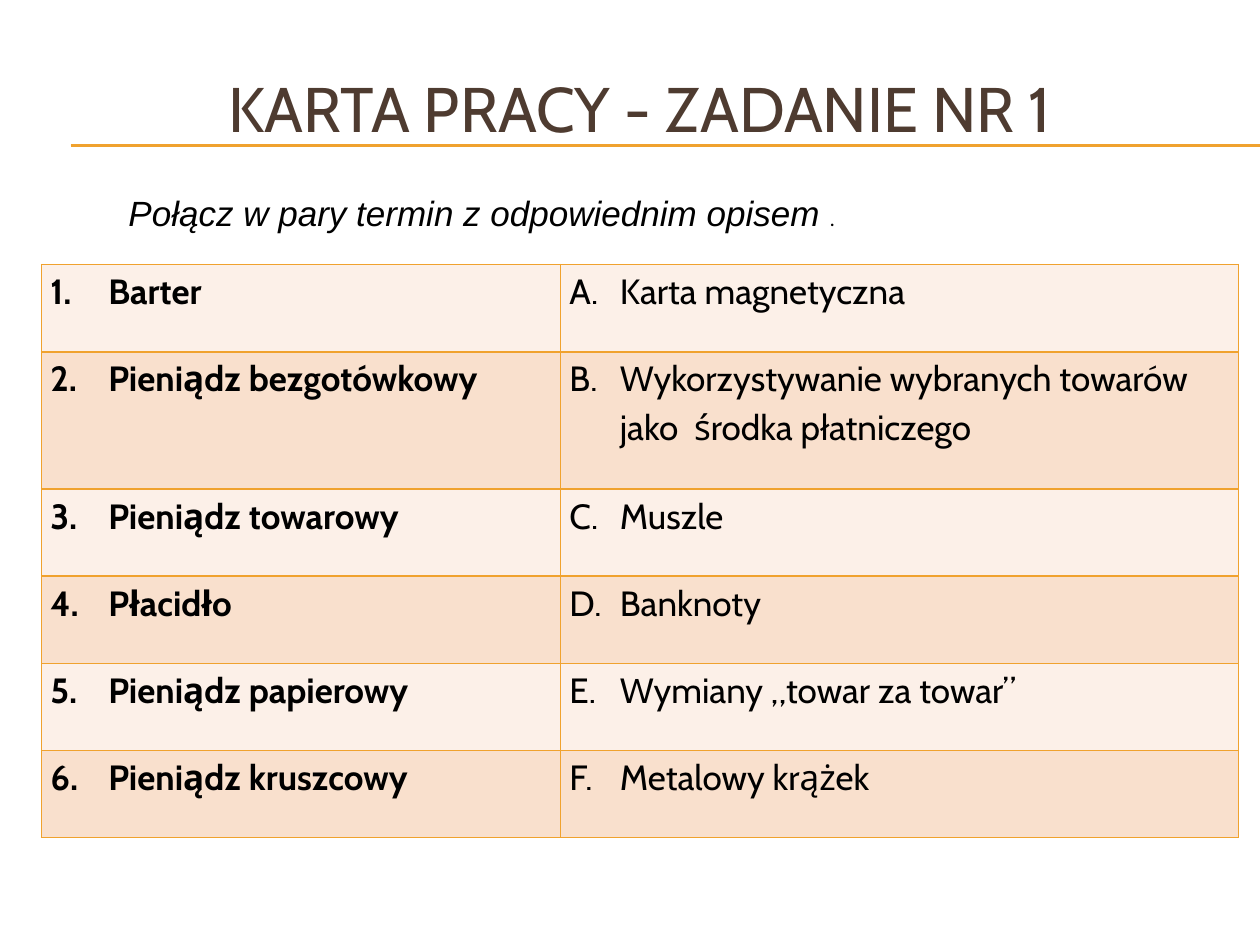
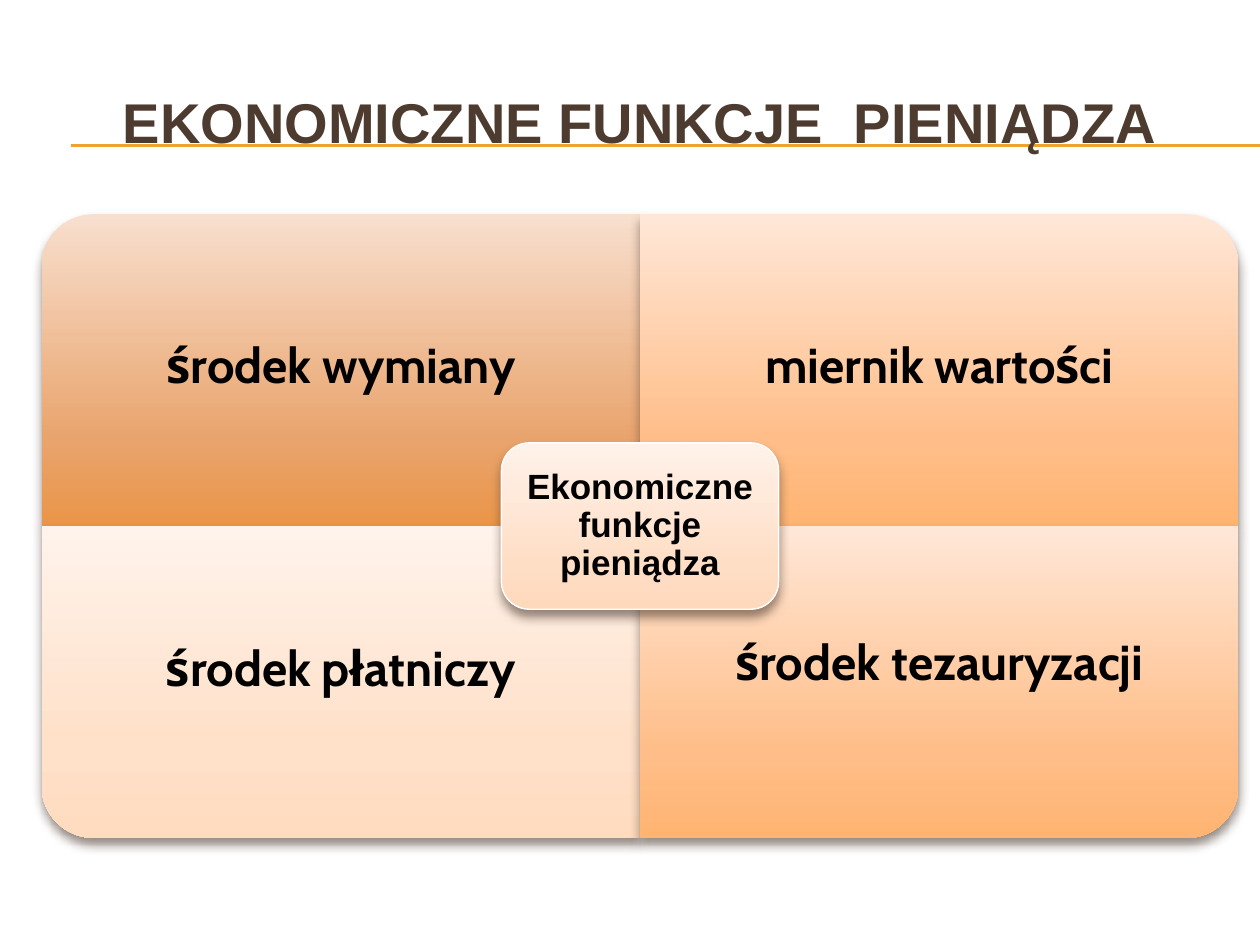
from dataclasses import dataclass
from pptx import Presentation
from pptx.dml.color import RGBColor
from pptx.enum.shapes import MSO_CONNECTOR, MSO_SHAPE
from pptx.enum.text import MSO_ANCHOR, PP_ALIGN
from pptx.oxml import parse_xml
from pptx.oxml.ns import qn
from pptx.util import Inches, Pt

NS = 'xmlns:a="http://schemas.openxmlformats.org/drawingml/2006/main"'


@dataclass(frozen=True)
class Theme:
    gold: str = "F0A22E"
    brown: str = "4E3B30"
    black: str = "000000"
    white: str = "FFFFFF"
    bands: tuple = ("FCF0E8", "F9E0CD")
    copper: tuple = ("F8DFCE", "E9A46D", "EA9548")
    orange: tuple = ("FFE7D7", "FFBE89", "FFB472")
    cream: tuple = ("FFF3EB", "FFE0C8", "FFDBBF")
    peach: tuple = ("FFF2EA", "FFDEC6", "FFD9BC")
    head: str = "Cabin"
    plain: str = "Arial"
    small: str = "Calibri"
    title: int = 36
    subtitle: int = 32
    label: int = 28
    body: int = 20
    dot: int = 12


T = Theme()

# The slide is a grid of 100 columns by 75 rows; boxes are (left, top, width, height).
COLS, ROWS = 100, 75
CELL = Inches(10) / COLS
LEFT, WIDE = 3.3, 95


def grid(*cells):
    return [round(n * CELL) for n in cells]


def style(run, size, font, color=T.black, bold=False, italic=False):
    face = run.font
    face.size, face.name, face.bold, face.italic = Pt(size), font, bold, italic
    face.color.rgb = RGBColor.from_string(color)


def pad(frame, side, top, low):
    frame.margin_left = frame.margin_right = Inches(side)
    frame.margin_top, frame.margin_bottom = Inches(top), Inches(low)


def write(frame, text, size, font, color=T.black, bold=False, wrap=True):
    """Fill a frame with one centred paragraph."""
    frame.word_wrap = wrap
    frame.vertical_anchor = MSO_ANCHOR.MIDDLE
    frame.text = text
    para = frame.paragraphs[0]
    para.alignment = PP_ALIGN.CENTER
    style(para.runs[0], size, font, color, bold)
    return para


def shade(shape, stops):
    """Give a shape an upright gradient and a soft shadow below."""
    marks = "".join(
        f'<a:gs pos="{pos}000"><a:srgbClr val="{color}"/></a:gs>'
        for pos, color in zip((0, 72, 100), stops))
    shape.fill.gradient()
    props = shape._element.spPr
    props.replace(props.find(qn("a:gradFill")), parse_xml(
        f'<a:gradFill {NS} rotWithShape="0"><a:gsLst>{marks}</a:gsLst>'
        '<a:lin ang="5400000" scaled="0"/></a:gradFill>'))
    shape.line.fill.background()
    shape.shadow.inherit = False
    props.find(qn("a:effectLst")).append(parse_xml(
        f'<a:outerShdw {NS} blurRad="{Pt(6)}" dist="{Pt(4)}" dir="5400000" '
        f'rotWithShape="0"><a:srgbClr val="{T.brown}">'
        '<a:alpha val="60000"/></a:srgbClr></a:outerShdw>'))


def add_head(slide, text, box, size, font, bold=False):
    for row in (11.5, 11.6):
        rule = slide.shapes.add_connector(
            MSO_CONNECTOR.STRAIGHT, *grid(5.6, row, COLS, row))
        rule.line.color.rgb = RGBColor.from_string(T.gold)
        rule.line.width = Pt(0.75)
        rule._element.spPr.append(parse_xml(f"<a:effectLst {NS}/>"))
    frame = slide.shapes.add_textbox(*grid(*box)).text_frame
    write(frame, text, size, font, T.brown, bold)


def add_task(slide, box):
    frame = slide.shapes.add_textbox(*grid(*box)).text_frame
    para = write(frame, "Połącz w pary termin z odpowiednim opisem ",
                 T.body, T.plain, wrap=False)
    para.runs[0].font.italic = True
    stop = para.add_run()
    stop.text = "."
    style(stop, T.dot, T.small, italic=True)


def edge(cell):
    props = cell._tc.get_or_add_tcPr()
    for spot, side in enumerate("LRTB"):
        props.insert(spot, parse_xml(
            f'<a:ln{side} {NS} w="{Pt(1)}"><a:solidFill>'
            f'<a:srgbClr val="{T.gold}"/></a:solidFill></a:ln{side}>'))


def fill_cell(cell, text, band, bold, hang):
    pad(cell, 0.07, 0, 0)
    cell.fill.solid()
    cell.fill.fore_color.rgb = RGBColor.from_string(band)
    edge(cell)
    para = cell.text_frame.paragraphs[0]
    para.text = text
    para.line_spacing, para.space_after = 1.15, Pt(10)
    props = para._p.get_or_add_pPr()
    props.set("marL", str(Inches(hang)))
    props.set("indent", str(-Inches(hang)))
    style(para.runs[0], T.body, T.head, bold=bold)


def add_pairs(slide, box, pairs):
    """Draw the terms beside the lettered descriptions."""
    table = slide.shapes.add_table(len(pairs), 2, *grid(*box)).table
    table.first_row = table.horz_banding = False
    for col, width in zip(table.columns, grid(41.2, 53.8)):
        col.width = width
    tall = 10.9
    low = (box[3] - tall) / (len(pairs) - 1)
    for row, (term, note) in enumerate(pairs):
        table.rows[row].height = grid(tall if row == 1 else low)[0]
        band = T.bands[row % 2]
        fill_cell(table.cell(row, 0), f"{row + 1}.\t{term}", band, True, 0.46)
        fill_cell(table.cell(row, 1), f"{'ABCDEF'[row]}.\t{note}", band, False, 0.4)


def add_part(slide, box, turn, stops):
    """Draw a quadrant whose rounded corner is turned outwards."""
    left, top, wide, high = box
    if turn % 180:
        left, top = left + (wide - high) / 2, top + (high - wide) / 2
        wide, high = high, wide
    part = slide.shapes.add_shape(
        MSO_SHAPE.ROUND_1_RECTANGLE, *grid(left, top, wide, high))
    part.rotation = turn
    shade(part, stops)


def add_label(slide, box, text, lift):
    """Write a label, raised above the middle of its box by lift inches."""
    frame = slide.shapes.add_textbox(*grid(*box)).text_frame
    inset = 0.22
    pad(frame, inset, inset + max(0, -2 * lift), inset + max(0, 2 * lift))
    write(frame, text, T.label, T.head, bold=True).line_spacing = 0.9


def add_hub(slide, box, text):
    hub = slide.shapes.add_shape(
        MSO_SHAPE.FLOWCHART_ALTERNATE_PROCESS, *grid(*box))
    shade(hub, T.peach)
    hub.line.color.rgb = RGBColor.from_string(T.white)
    hub.line.width = Pt(0.79)
    pad(hub.text_frame, 0.08, 0.08, 0.08)
    write(hub.text_frame, text, T.body, T.plain, bold=True).line_spacing = 0.9


def add_matrix(slide, box, parts, hub):
    left, top, wide, high = box
    half, tier = wide / 2, high / 2
    depth = tier * 0.75
    for spot, (text, turn, stops, lift) in enumerate(parts):
        row, col = divmod(spot, 2)
        x, y = left + col * half, top + row * tier
        add_part(slide, (x, y, half, tier), turn, stops)
        add_label(slide, (x, y + row * (tier - depth), half, depth), text, lift)
    size = (22, 13.2)
    add_hub(slide, (left + half - size[0] / 2, top + tier - size[1] / 2, *size), hub)


def task_slide(slide):
    add_head(slide, "KARTA PRACY - ZADANIE NR 1",
             (LEFT, 2.9, WIDE, 11.3), T.title, T.head)
    add_pairs(slide, (LEFT, 21, WIDE, 45.5), (
        ("Barter", "Karta magnetyczna"),
        ("Pieniądz bezgotówkowy",
         "Wykorzystywanie wybranych towarów jako  środka płatniczego"),
        ("Pieniądz towarowy", "Muszle"),
        ("Płacidło", "Banknoty"),
        ("Pieniądz papierowy", "Wymiany „towar za towar”"),
        ("Pieniądz kruszcowy", "Metalowy krążek")))
    add_task(slide, (9, 14.7, 58.5, 4.4))


def roles_slide(slide):
    add_head(slide, "EKONOMICZNE FUNKCJE  PIENIĄDZA",
             (LEFT, 5, WIDE, 9.2), T.subtitle, T.plain, bold=True)
    add_matrix(slide, (LEFT, 17, WIDE, 49.5), (
        ("środek wymiany", 270, T.copper, -0.29),
        ("miernik wartości", 0, T.orange, -0.29),
        ("środek płatniczy", 180, T.cream, 0.4),
        ("środek tezauryzacji", 90, T.orange, 0.45)),
        "Ekonomiczne funkcje pieniądza")


def main():
    deck = Presentation()
    deck.slide_width, deck.slide_height = grid(COLS, ROWS)
    for build in (task_slide, roles_slide):
        build(deck.slides.add_slide(deck.slide_layouts[6]))
    deck.save("out.pptx")


if __name__ == "__main__":
    main()
